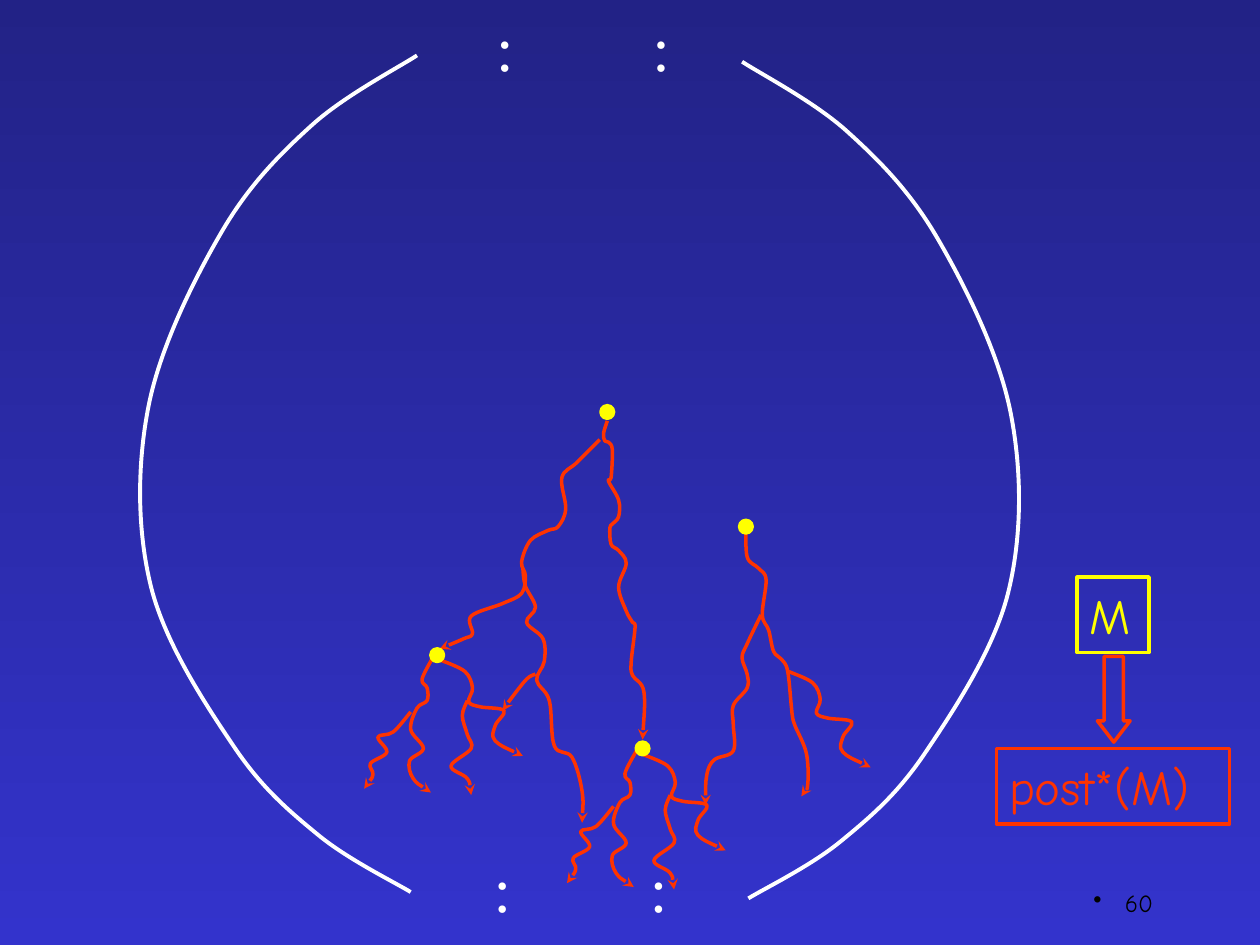
"""Build the slide showing the states reachable from M as branching runs inside a state space."""
from dataclasses import dataclass

from lxml import etree
from pptx import Presentation
from pptx.dml.color import RGBColor
from pptx.enum.shapes import MSO_SHAPE
from pptx.enum.text import PP_ALIGN
from pptx.oxml.ns import qn
from pptx.util import Cm, Pt

RECTANGLE = MSO_SHAPE.RECTANGLE
DOWN_ARROW = MSO_SHAPE.DOWN_ARROW
OVAL = MSO_SHAPE.OVAL
LEFT = PP_ALIGN.LEFT
RIGHT = PP_ALIGN.RIGHT

Point = tuple[float, float]
Box = tuple[float, float, float, float]


@dataclass(frozen=True)
class Theme:
    top: str = "222286"
    bottom: str = "3333CC"
    space: str = "FFFFFF"
    start: str = "FFFF00"
    run: str = "FF3300"
    number: str = "000000"
    font: str = "Comic Neue"
    dots_font: str = "Times New Roman"
    label_size: int = 28
    dots_size: int = 36
    number_size: int = 14
    line: float = 2
    border: float = 2.25


@dataclass(frozen=True)
class Label:
    text: str
    box: Box
    color: str


THEME = Theme()
LABELS = (
    Label("M", (8.55, 4.58, 0.57, 0.6), THEME.start),
    Label("post*(M)", (7.91, 5.94, 1.85, 0.6), THEME.run),
)
ARROW_BOX = (8.71, 5.21, 0.26, 0.68)
NUMBER_BOX = (7.17, 7, 2.08, 0.5)
DOTS = ((3.84, 0.02), (5.08, 0.02), (3.82, 6.69), (5.06, 6.69))
STATES = ((3.42, 5.15), (4.77, 3.22), (5.05, 5.89), (5.87, 4.13))

LEFT_BORDER = ((3.31, 0.44), (2.48, 0.99), (1.76, 1.84), (1.18, 3.22),
               (1.2, 4.66), (1.86, 5.93), (2.53, 6.63), (3.26, 7.08))
RIGHT_BORDER = tuple((9.2 - x, y + 0.05) for x, y in LEFT_BORDER)

SIDE_RUN = ((3.5, 5.24), (3.69, 5.33), (3.75, 5.46), (3.72, 5.57), (3.81, 5.61),
            (4, 5.64), (3.93, 5.76), (3.93, 5.88), (4.15, 6))
STATE_RUNS = (
    ((3.44, 5.21), (3.35, 5.39), (3.39, 5.46), (3.39, 5.56), (3.31, 5.62),
     (3.26, 5.79), (3.36, 5.94), (3.25, 6.04), (3.28, 6.18), (3.42, 6.29)),
    SIDE_RUN,
    ((3.26, 5.65), (3.12, 5.81), (3, 5.85), (3.07, 5.97), (2.94, 6.06),
     (2.96, 6.15), (2.89, 6.26)),
    ((3.71, 5.56), (3.67, 5.68), (3.71, 5.83), (3.74, 5.94), (3.58, 6.08),
     (3.71, 6.18), (3.74, 6.31)),
)
LONG_RUNS = (
    ((5.92, 4.17), (5.93, 4.42), (6.02, 4.51), (6.08, 4.6), (6.05, 4.88),
     (6.1, 5), (6.14, 5.17), (6.2, 5.23), (6.25, 5.32), (6.28, 5.6),
     (6.29, 5.69), (6.31, 5.76), (6.4, 5.98), (6.41, 6.23), (6.36, 6.32)),
    ((4.82, 3.34), (4.79, 3.44), (4.8, 3.5), (4.83, 3.51), (4.86, 3.57),
     (4.85, 3.79), (4.83, 3.82), (4.91, 3.97), (4.91, 4.1), (4.86, 4.16),
     (4.84, 4.19), (4.85, 4.32), (4.91, 4.37), (4.97, 4.47), (4.91, 4.66),
     (4.97, 4.85), (5.02, 4.94), (5.04, 4.98), (5.01, 5.25), (5.02, 5.36),
     (5.11, 5.49), (5.1, 5.87)),
    ((6.04, 4.88), (5.93, 5.11), (5.89, 5.22), (5.93, 5.35), (5.93, 5.46),
     (5.82, 5.6), (5.82, 5.75), (5.82, 5.96), (5.67, 6.03), (5.61, 6.15),
     (5.6, 6.39)),
    ((4.76, 3.49), (4.58, 3.67), (4.46, 3.79), (4.49, 4.04), (4.43, 4.18),
     (4.35, 4.21), (4.21, 4.29), (4.14, 4.46), (4.17, 4.57), (4.14, 4.71),
     (3.99, 4.79), (3.74, 4.89), (3.75, 5.03), (3.68, 5.07), (3.49, 5.15)),
    ((4.15, 4.51), (4.17, 4.65), (4.25, 4.82), (4.18, 4.94), (4.31, 5.07),
     (4.32, 5.25), (4.26, 5.4), (4.36, 5.56), (4.4, 5.92), (4.54, 6.01),
     (4.62, 6.28), (4.62, 6.53)),
    ((4.25, 5.35), (4.18, 5.39), (4.06, 5.54), (3.99, 5.64)),
)


def length(inches: float) -> Cm:
    return Cm(inches * 2.54)


def shifted(points: tuple[Point, ...], dx: float, dy: float) -> tuple[Point, ...]:
    return tuple((x + dx, y + dy) for x, y in points)


def style_outline(sp, color: str, width: float, fill: str | None = None) -> None:
    sp.shadow.inherit = False
    if fill:
        sp.fill.solid()
        sp.fill.fore_color.rgb = RGBColor.from_string(fill)
    else:
        sp.fill.background()
    sp.line.color.rgb = RGBColor.from_string(color)
    sp.line.width = Pt(width)


def add_outline(s, kind, box: Box, color: str, fill: str | None = None):
    sp = s.shapes.add_shape(kind, *map(length, box))
    style_outline(sp, color, THEME.line, fill)
    return sp


def write(sp, text: str, font: str, size: float, color: str, align=LEFT):
    sp.text_frame.text = text
    p = sp.text_frame.paragraphs[0]
    p.alignment = align
    r = p.runs[0]
    r.font.name, r.font.size = font, Pt(size)
    r.font.color.rgb = RGBColor.from_string(color)
    return p


def add_curve(s, points: tuple[Point, ...], color: str, width: float, arrow: bool = True) -> None:
    emu = [(length(x), length(y)) for x, y in points]
    builder = s.shapes.build_freeform(*emu[0])
    builder.add_line_segments(emu[1:], close=False)
    sp = builder.convert_to_shape()
    style_outline(sp, color, width)
    knots = [(int(pt.get("x")), int(pt.get("y"))) for pt in sp._element.iter(qn("a:pt"))]
    padded = [knots[0], *knots, knots[-1]]
    for i, segment in enumerate(list(sp._element.iter(qn("a:lnTo")))):
        before, start, end, after = padded[i:i + 4]
        controls = (
            [a + (c - b) / 6 for a, b, c in zip(start, before, end)],
            [a - (c - b) / 6 for a, b, c in zip(end, start, after)],
            end,
        )
        bezier = etree.Element(qn("a:cubicBezTo"))
        for x, y in controls:
            etree.SubElement(bezier, qn("a:pt"), x=str(round(x)), y=str(round(y)))
        segment.getparent().replace(segment, bezier)
    if arrow:
        etree.SubElement(sp.line._get_or_add_ln(), qn("a:tailEnd"), type="stealth")


def add_dots(s, left: float, top: float) -> None:
    sp = s.shapes.add_textbox(*map(length, (left, top, 0.34, 0.7)))
    sp.text_frame.word_wrap = False
    p = write(sp, "׃", THEME.dots_font, THEME.dots_size, THEME.space)
    etree.SubElement(p.runs[0]._r.get_or_add_rPr(), qn("a:cs"), typeface=THEME.dots_font)


def add_number(s) -> None:
    sp = s.shapes.add_textbox(*map(length, NUMBER_BOX))
    sp.text_frame.word_wrap = True
    p = write(sp, "60", THEME.font, THEME.number_size, THEME.number, RIGHT)
    properties = p._p.get_or_add_pPr()
    properties.set("marL", str(length(0.25)))
    properties.set("indent", str(-length(0.25)))
    etree.SubElement(properties, qn("a:buChar"), char="•")


def main() -> None:
    prs = Presentation()
    prs.slide_width, prs.slide_height = Cm(25.4), Cm(19.05)
    s = prs.slides.add_slide(prs.slide_layouts[6])
    background = s.background.fill
    background.gradient()
    background.gradient_angle = 270
    for stop, color in zip(background.gradient_stops, (THEME.top, THEME.bottom)):
        stop.color.rgb = RGBColor.from_string(color)

    add_number(s)
    for left, top in DOTS:
        add_dots(s, left, top)
    for border in (LEFT_BORDER, RIGHT_BORDER):
        add_curve(s, border, THEME.space, THEME.border, arrow=False)
    for label in LABELS:
        sp = add_outline(s, RECTANGLE, label.box, label.color)
        write(sp, label.text, THEME.font, THEME.label_size, label.color)
    arrow = add_outline(s, DOWN_ARROW, ARROW_BOX, THEME.run)
    arrow.adjustments[0], arrow.adjustments[1] = 0.59, 0.65

    lower_runs = tuple(shifted(run, 1.61, 0.75) for run in STATE_RUNS)
    for run in (*LONG_RUNS, *STATE_RUNS, *lower_runs, shifted(SIDE_RUN, 2.76, 0.09)):
        add_curve(s, run, THEME.run, THEME.line)
    for left, top in STATES:
        add_outline(s, OVAL, (left, top, 0.1, 0.1), THEME.start, THEME.start)
    prs.save("out.pptx")


if __name__ == "__main__":
    main()
